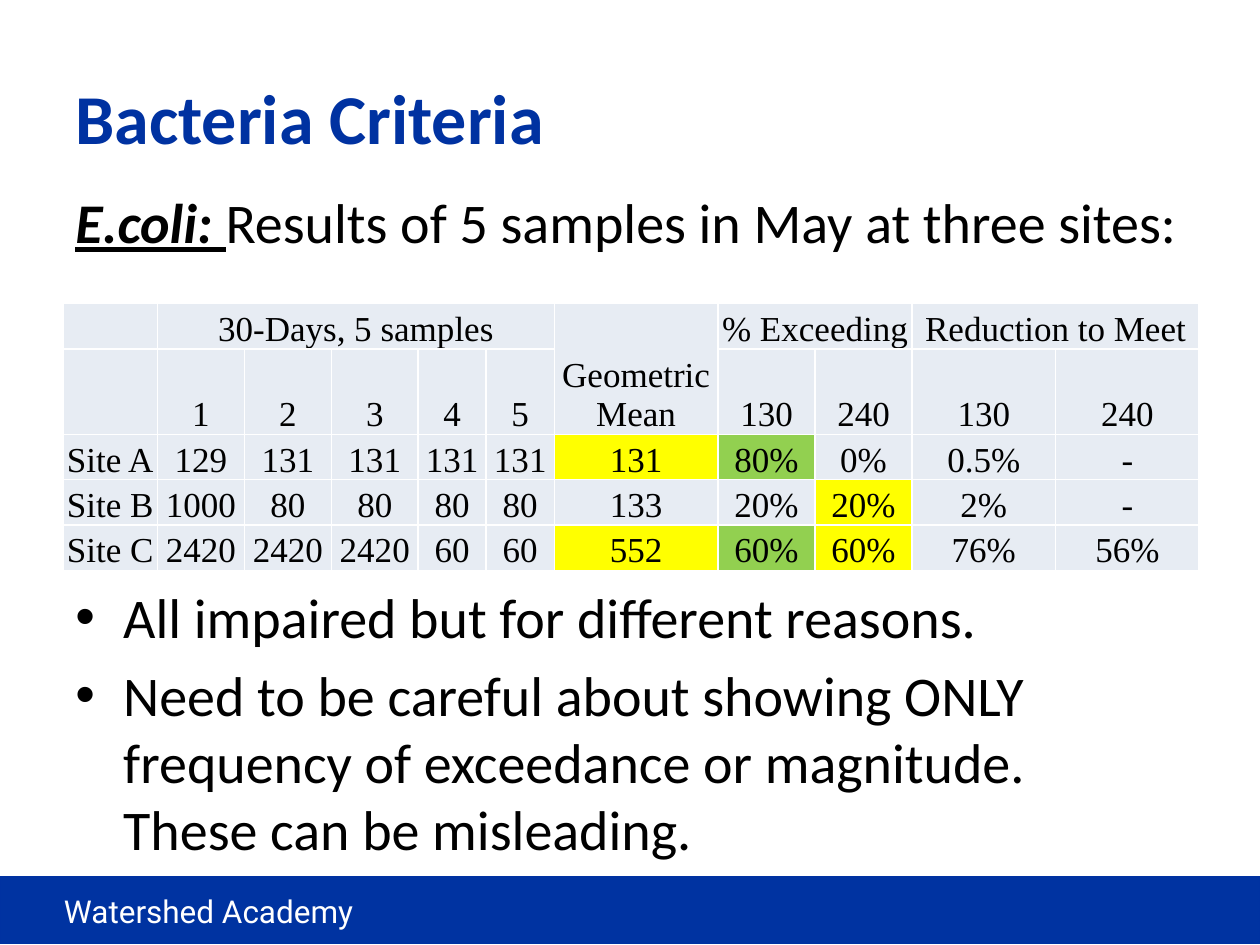
from lxml import etree
from pptx import Presentation, util as u
from pptx.dml.color import RGBColor
from pptx.enum import shapes, text
from pptx.oxml import ns

COLORS = {
    "blue": "0032A1", "bar": "0033A1", "white": "FFFFFF", "black": "000000",
    "pale": "E7ECF3", "yellow": "FFFF00", "green": "92D050",
}
GRID_COLUMNS, GRID_ROWS = 20, 15

COLUMN_WIDTHS = [0.75, 0.69, 0.69, 0.69, 0.54, 0.54, 1.3, 0.77, 0.77, 1.14, 1.14]
ROWS = [
    ["", "30-Days, 5 samples", "", "", "", "", "Geometric Mean",
     "% Exceeding", "", "Reduction to Meet", ""],
    ["", "1", "2", "3", "4", "5", "", "130", "240", "130", "240"],
    ["Site A", "129", "131", "131", "131", "131", "131", "80%", "0%", "0.5%", "-"],
    ["Site B", "1000", "80", "80", "80", "80", "133", "20%", "20%", "2%", "-"],
    ["Site C", "2420", "2420", "2420", "60", "60", "552", "60%", "60%", "76%", "56%"],
]
MERGES = [((0, 1), (0, 5)), ((0, 6), (1, 6)), ((0, 7), (0, 8)), ((0, 9), (0, 10))]
HIGHLIGHTS = {
    (2, 6): "yellow", (4, 6): "yellow", (3, 8): "yellow", (4, 8): "yellow",
    (2, 7): "green", (4, 7): "green",
}


def color(name):
    return RGBColor.from_string(COLORS[name])


class SlideBuilder:
    body_font, table_font, footer_font = "Calibri", "Times New Roman", "Roboto"

    def __init__(self, deck):
        self.deck = deck
        self.page = deck.slides.add_slide(deck.slide_layouts[5])

    def place(self, left, top, width, height):
        """Turn grid columns and rows into slide lengths."""
        column = self.deck.slide_width / GRID_COLUMNS
        row = self.deck.slide_height / GRID_ROWS
        return [round(n) for n in (left * column, top * row, width * column, height * row)]

    def span(self, para, words, size, font, fill="black", **style):
        span = para.add_run()
        span.text = words
        span.font.size, span.font.name = u.Pt(size), font
        span.font.color.rgb = color(fill)
        for name, value in style.items():
            setattr(span.font, name, value)

    def title(self, words, *area):
        title = self.page.shapes.title
        title.left, title.top, title.width, title.height = self.place(*area)
        title.text_frame.vertical_anchor = text.MSO_ANCHOR.MIDDLE
        para = title.text_frame.paragraphs[0]
        para.alignment = text.PP_ALIGN.LEFT
        self.span(para, words, 40, self.body_font, "blue", bold=True)

    def bar(self, fill, *area):
        bar = self.page.shapes.add_shape(shapes.MSO_SHAPE.RECTANGLE, *self.place(*area))
        bar.shadow.inherit = False
        bar.fill.solid()
        bar.fill.fore_color.rgb = color(fill)
        bar.line.color.rgb = color("blue")
        bar.line.width = u.Pt(0.75)

    def text_box(self, *area):
        box = self.page.shapes.add_textbox(*self.place(*area))
        box.text_frame.word_wrap = True
        return box.text_frame

    def bullet(self, frame, lines, space_before):
        para = frame.add_paragraph()
        para.space_before = u.Pt(space_before)
        properties = para._p.get_or_add_pPr()
        indent = u.Inches(0.38)
        properties.set("marL", str(indent))
        properties.set("indent", str(-indent))
        etree.SubElement(properties, ns.qn("a:buFont"), typeface="Arial")
        etree.SubElement(properties, ns.qn("a:buChar"), char="•")
        for number, line in enumerate(lines):
            if number:
                para.add_line_break()
            self.span(para, line, 32, self.body_font)

    def cell(self, cell, words, fill):
        cell.margin_left = cell.margin_right = cell.margin_top = u.Inches(0.01)
        cell.margin_bottom = 0
        cell.vertical_anchor = text.MSO_ANCHOR.BOTTOM
        properties = cell._tc.get_or_add_tcPr()
        for side in ("lnL", "lnR", "lnT", "lnB"):
            border = etree.SubElement(properties, ns.qn(f"a:{side}"), w=str(u.Pt(1)))
            paint = etree.SubElement(border, ns.qn("a:solidFill"))
            etree.SubElement(paint, ns.qn("a:srgbClr"), val=COLORS["white"])
        cell.fill.solid()
        cell.fill.fore_color.rgb = color(fill)
        if words:
            para = cell.text_frame.paragraphs[0]
            para.alignment = text.PP_ALIGN.CENTER
            self.span(para, words, 20, self.table_font)

    def table(self, rows, widths, merges, highlights, *area):
        frame = self.page.shapes.add_table(len(rows), len(widths), *self.place(*area))
        table = frame.table
        table.first_row = table.horz_banding = False
        for column, width in zip(table.columns, widths):
            column.width = u.Inches(width)
        for r, row in enumerate(rows):
            for c, words in enumerate(row):
                self.cell(table.cell(r, c), words, highlights.get((r, c), "pale"))
        for first, last in merges:
            table.cell(*first).merge(table.cell(*last))


def main():
    deck = Presentation()
    deck.slide_width, deck.slide_height = u.Inches(10), u.Inches(7.5)
    slide = SlideBuilder(deck)

    # Footer
    slide.bar("bar", 0, 13.92, 20, 1.06)
    footer = slide.text_box(0.82, 14.06, 6.72, 0.82)
    slide.span(footer.paragraphs[0], "Watershed Academy", 18, slide.footer_font, "white")

    # Title
    slide.title("Bacteria Criteria", 1, 0.6, 18, 2.5)

    # Introduction and conclusions, with room for the table between them
    body = slide.text_box(1, 2.88, 18, 11)
    intro = body.paragraphs[0]
    slide.span(intro, "E.coli: ", 32, slide.body_font, bold=True, italic=True, underline=True)
    slide.span(intro, "Results of 5 samples in May at three sites:", 32, slide.body_font)
    slide.bullet(body, ["All impaired but for different reasons."], 187)
    slide.bullet(body, ["Need to be careful about showing ONLY frequency of exceedance or magnitude.",
                        "These can be misleading."], 6.4)

    # Sample results
    slide.table(ROWS, COLUMN_WIDTHS, MERGES, HIGHLIGHTS, 1, 4.82, 18, 3.6)

    deck.save("out.pptx")


if __name__ == "__main__":
    main()
